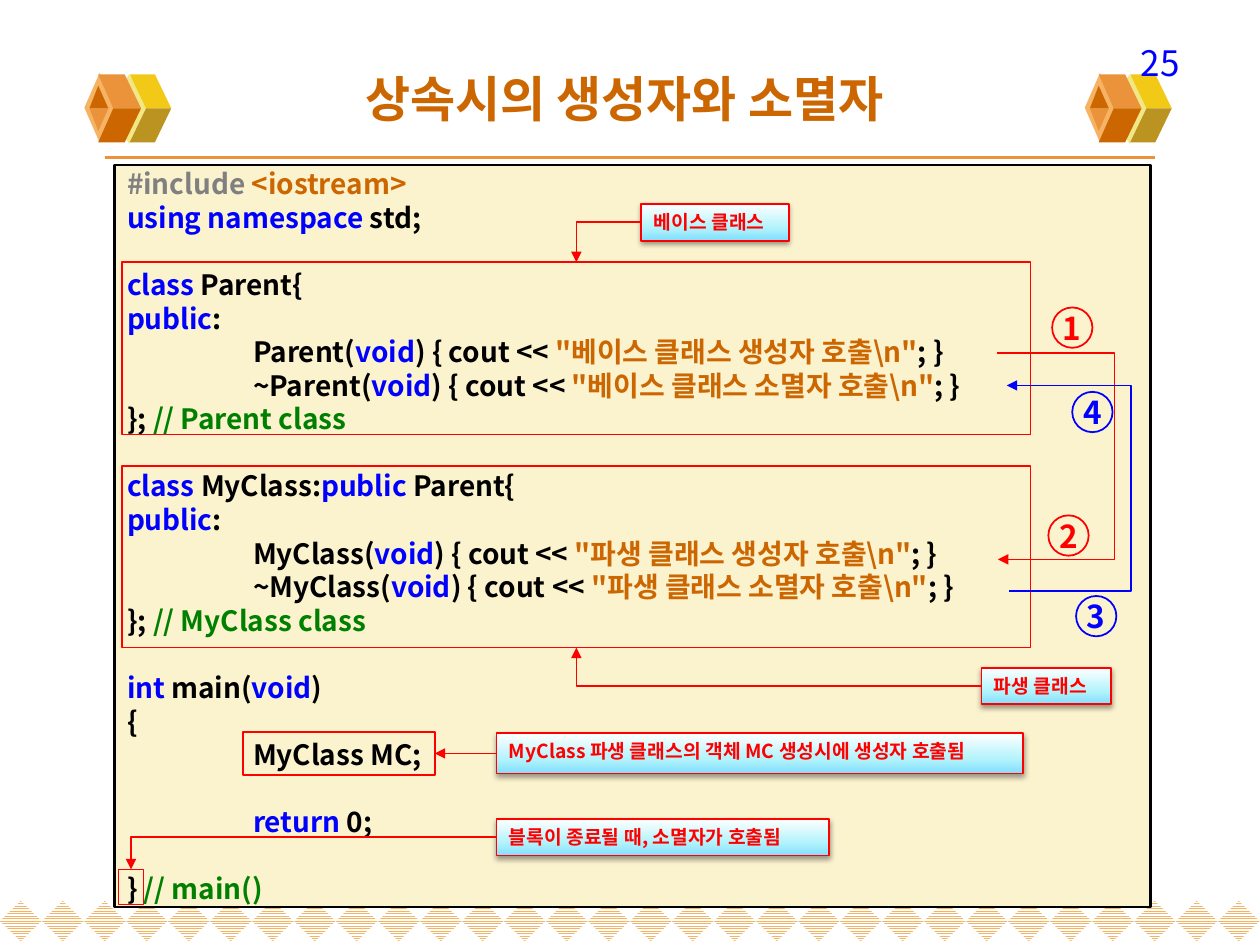
import pptx
import pptx.util
import pptx.dml.color
import pptx.enum.dml
import pptx.enum.shapes
import pptx.enum.text
import pptx.oxml
import pptx.oxml.ns
from lxml import etree

Inches, Pt = pptx.util.Inches, pptx.util.Pt
RGBColor = pptx.dml.color.RGBColor
SHAPE = pptx.enum.shapes.MSO_SHAPE
CONNECTOR = pptx.enum.shapes.MSO_CONNECTOR
ALIGN = pptx.enum.text.PP_ALIGN
ANCHOR = pptx.enum.text.MSO_ANCHOR
qn = pptx.oxml.ns.qn

FONT = "Noto Sans CJK KR"
WHITE = RGBColor(0xFF, 0xFF, 0xFF)
BLACK = RGBColor(0x00, 0x00, 0x00)
GRAY = RGBColor(0x80, 0x80, 0x80)
RED = RGBColor(0xFF, 0x00, 0x00)
BLUE = RGBColor(0x00, 0x00, 0xFF)
GREEN = RGBColor(0x00, 0x80, 0x00)
BROWN = RGBColor(0xCC, 0x66, 0x00)
CREAM = RGBColor(0xFB, 0xF2, 0xCE)
ORANGE = RGBColor(0xEB, 0x93, 0x3B)
PEACH = RGBColor(0xF5, 0xB3, 0x63)
PALE_YELLOW = RGBColor(0xF1, 0xE7, 0x85)
YELLOW = RGBColor(0xF3, 0xC9, 0x17)
OLIVE = RGBColor(0xBB, 0x93, 0x21)

A_NS = 'xmlns:a="http://schemas.openxmlformats.org/drawingml/2006/main"'
LABEL_GRADIENT = (
    f'<a:gradFill {A_NS} rotWithShape="1"><a:gsLst>'
    '<a:gs pos="0"><a:srgbClr val="81DEFF"/></a:gs>'
    '<a:gs pos="35000"><a:srgbClr val="B2F3FC"/></a:gs>'
    '<a:gs pos="100000"><a:srgbClr val="FFFFFF"/></a:gs>'
    '</a:gsLst><a:lin ang="16200000" scaled="1"/></a:gradFill>')
LABEL_SHADOW = (
    f'<a:outerShdw {A_NS} blurRad="39370" dist="20320" dir="5400000" rotWithShape="0">'
    '<a:srgbClr val="000000"><a:alpha val="38000"/></a:srgbClr></a:outerShdw>')


def style_run(run, size, color, bold=True):
    run.font.size = Pt(size)
    run.font.bold = bold
    run.font.color.rgb = color
    run.font.name = FONT
    etree.SubElement(run._r.get_or_add_rPr(), qn("a:ea")).set("typeface", FONT)


def write(shape, text, size, color, align, bold=True):
    paragraph = shape.text_frame.paragraphs[0]
    paragraph.text = text
    paragraph.alignment = align
    style_run(paragraph.runs[0], size, color, bold)


def paint(shape, fill=None, line=None, width=1):
    shape.shadow.inherit = False
    if fill is None:
        shape.fill.background()
    else:
        shape.fill.solid()
        shape.fill.fore_color.rgb = fill
    if line is None:
        shape.line.fill.background()
    else:
        shape.line.color.rgb = line
        shape.line.width = Pt(width)


def add_box(slide, kind, box, fill=None, line=None, width=1):
    shape = slide.shapes.add_shape(kind, *map(Inches, box))
    paint(shape, fill, line, width)
    return shape


def add_polygon(slide, points, fill):
    corners = [(Inches(x), Inches(y)) for x, y in points]
    builder = slide.shapes.build_freeform(*corners[0], scale=1.0)
    builder.add_line_segments(corners[1:], close=True)
    paint(builder.convert_to_shape(), fill)


def add_diamond_band(slide):
    for column in range(30):
        diamond = add_box(slide, SHAPE.DIAMOND, (column / 3, 7.15, 0.33, 0.32))
        diamond.fill.patterned()
        diamond.fill.pattern = pptx.enum.dml.MSO_PATTERN.NARROW_HORIZONTAL
        diamond.fill.fore_color.rgb = PEACH
        diamond.fill.back_color.rgb = WHITE


def add_cube(slide, left):
    """Ornament of two diamonds with mirrored upper and lower facets."""
    middle = 0.86

    def facet(points, upper, lower):
        for sign, color in ((-1, upper), (1, lower)):
            add_polygon(slide, [(left + x, middle + sign * y) for x, y in points], color)

    add_box(slide, SHAPE.DIAMOND, (left + 0.19, 0.59, 0.33, 0.55), PALE_YELLOW)
    facet([(0.49, 0), (0.69, 0), (0.56, 0.27), (0.36, 0.27)], YELLOW, OLIVE)
    add_box(slide, SHAPE.DIAMOND, (left, 0.58, 0.24, 0.55), PEACH)
    facet([(0.23, 0), (0.45, 0), (0.32, 0.27), (0.11, 0.27)], ORANGE, BROWN)
    facet([(0.11, 0.18), (0.04, 0), (0.19, 0)], BROWN, ORANGE)


def add_line(slide, kind, start, end, color, width=1, arrow=None):
    """arrow is 'headEnd' for the start, 'tailEnd' for the end."""
    line = slide.shapes.add_connector(kind, *map(Inches, (*start, *end)))
    line.line.color.rgb = color
    line.line.width = Pt(width)
    if arrow:
        etree.SubElement(line.line._get_or_add_ln(), qn(f"a:{arrow}")).set("type", "triangle")
    etree.SubElement(line._element.spPr, qn("a:effectLst"))
    return line


def add_call_order(slide, start, end, bend_x, color, arrow):
    line = add_line(slide, CONNECTOR.ELBOW, start, end, color, arrow=arrow)
    ratio = (bend_x - start[0]) / (end[0] - start[0])
    guide = etree.SubElement(line._element.spPr.prstGeom.get_or_add_avLst(), qn("a:gd"))
    guide.set("name", "adj1")
    guide.set("fmla", f"val {round(ratio * 100000)}")


def add_pointer(slide, label, target, side):
    """Corner arrow from the label's left side to a side of the target."""
    start = (label.left.inches, label.top.inches + label.height.inches / 2)
    end = (target.left.inches + target.width.inches / 2,
           target.top.inches + (target.height.inches if side == 2 else 0))
    pointer = add_line(slide, CONNECTOR.ELBOW, start, end, RED, arrow="tailEnd")
    pointer._element.spPr.prstGeom.set("prst", "bentConnector2")
    pointer.begin_connect(label, 1)
    pointer.end_connect(target, side)


def add_label(slide, text, box):
    label = add_box(slide, SHAPE.RECTANGLE, box, WHITE, RED)
    properties = label._element.spPr
    properties.replace(properties.find(qn("a:solidFill")), pptx.oxml.parse_xml(LABEL_GRADIENT))
    properties.find(qn("a:effectLst")).append(pptx.oxml.parse_xml(LABEL_SHADOW))
    label.text_frame.word_wrap = True
    label.text_frame.vertical_anchor = ANCHOR.TOP
    write(label, text, 11, RED, ALIGN.JUSTIFY)
    return label


def add_step(slide, number, left, top, color):
    step = add_box(slide, SHAPE.OVAL, (left, top, 0.32, 0.32), line=color)
    step.text_frame.word_wrap = False
    write(step, str(number), 18, color, ALIGN.CENTER)


def class_lines(name, korean, heading):
    def member(prefix, role):
        return [(f"\t{prefix}{name}(", BLACK), ("void", BLUE), (") { cout << ", BLACK),
                (f'"{korean} 클래스 {role} 호출\\n"', BROWN), ("; }", BLACK)]

    return [heading, [("public", BLUE), (":", BLACK)],
            member("", "생성자"), member("~", "소멸자"),
            [("}; ", BLACK), (f"// {name} class", GREEN)], []]


def code_lines():
    return [
        [("#include ", GRAY), ("<iostream>", BROWN)],
        [("using namespace", BLUE), (" std;", BLACK)], [],
        *class_lines("Parent", "베이스", [("class", BLUE), (" Parent{", BLACK)]),
        *class_lines("MyClass", "파생", [("class ", BLUE), ("MyClass:", BLACK),
                                       ("public", BLUE), (" Parent{", BLACK)]),
        [("int", BLUE), (" main(", BLACK), ("void", BLUE), (")", BLACK)],
        [("{", BLACK)], [("\tMyClass MC;", BLACK)], [],
        [("\t", BLACK), ("return", BLUE), (" 0;", BLACK)], [],
        [("} ", BLACK), ("// main()", GREEN)]]


def set_tab_stop(paragraph, position):
    tabs = etree.SubElement(paragraph._p.get_or_add_pPr(), qn("a:tabLst"))
    stop = etree.SubElement(tabs, qn("a:tab"))
    stop.set("pos", str(Inches(position)))
    stop.set("algn", "l")


def add_code(slide):
    panel = add_box(slide, SHAPE.RECTANGLE, (0.91, 1.31, 8.22, 5.89), CREAM, BLACK, 1.5)
    frame = panel.text_frame
    frame.word_wrap = True
    frame.vertical_anchor = ANCHOR.MIDDLE
    for index, tokens in enumerate(code_lines()):
        paragraph = frame.add_paragraph() if index else frame.paragraphs[0]
        paragraph.alignment = ALIGN.LEFT
        paragraph.line_spacing = Pt(19.2)
        set_tab_stop(paragraph, 1)
        paragraph.font.size = Pt(16)
        for text, color in tokens:
            run = paragraph.add_run()
            run.text = text
            style_run(run, 16, color)


def main():
    deck = pptx.Presentation()
    deck.slide_width, deck.slide_height = Inches(10), Inches(7.5)
    slide = deck.slides.add_slide(deck.slide_layouts[5])

    # Decoration, page number and title
    add_diamond_band(slide)
    add_line(slide, CONNECTOR.STRAIGHT, (0.83, 1.25), (9.17, 1.25), ORANGE, 2.25)
    for left in (0.67, 8.61):
        add_cube(slide, left)
    page_number = slide.shapes.add_textbox(*map(Inches, (7.13, 0.28, 2.33, 0.3)))
    page_number.text_frame.word_wrap = True
    write(page_number, "25", 20, BLUE, ALIGN.RIGHT, bold=False)
    title = slide.shapes.title
    title.left, title.top, title.width, title.height = map(Inches, (0.5, 0.3, 9, 0.95))
    title.text_frame.vertical_anchor = ANCHOR.MIDDLE
    write(title, "상속시의 생성자와 소멸자 ", 28, BROWN, ALIGN.CENTER)

    # Code with its labels and marked regions
    add_code(slide)
    base_label = add_label(slide, "베이스 클래스", (5.09, 1.62, 1.17, 0.29))
    derived_label = add_label(slide, "파생 클래스", (7.79, 5.3, 1.03, 0.29))
    object_label = add_label(slide, "MyClass 파생 클래스의 객체 MC 생성시에 생성자 호출됨",
                             (3.94, 5.82, 4.18, 0.32))
    end_label = add_label(slide, "블록이 종료될 때, 소멸자가 호출됨", (3.94, 6.5, 2.64, 0.29))
    base_class, derived_class, object_line, closing_brace = [
        add_box(slide, SHAPE.RECTANGLE, box, line=RED)
        for box in ((0.97, 2.08, 7.21, 1.37), (0.97, 3.7, 7.21, 1.44),
                    (1.93, 5.81, 1.52, 0.34), (0.94, 6.9, 0.2, 0.28))]

    # Arrows from labels to regions
    add_pointer(slide, base_label, base_class, 0)
    add_pointer(slide, derived_label, derived_class, 2)
    add_pointer(slide, end_label, closing_brace, 0)
    object_arrow = add_line(slide, CONNECTOR.STRAIGHT, (3.94, 5.98), (3.45, 5.98), RED,
                            arrow="tailEnd")
    object_arrow.begin_connect(object_label, 1)
    object_arrow.end_connect(object_line, 3)

    # Order of constructor and destructor calls
    add_call_order(slide, (7.91, 2.8), (7.92, 4.44), 8.86, RED, "tailEnd")
    add_call_order(slide, (7.99, 3.06), (8.01, 4.69), 8.97, BLUE, "headEnd")
    for step in ((1, 8.35, 2.44, RED), (2, 8.32, 4.09, RED),
                 (3, 8.54, 4.73, BLUE), (4, 8.51, 3.11, BLUE)):
        add_step(slide, *step)

    deck.save("out.pptx")


if __name__ == "__main__":
    main()
